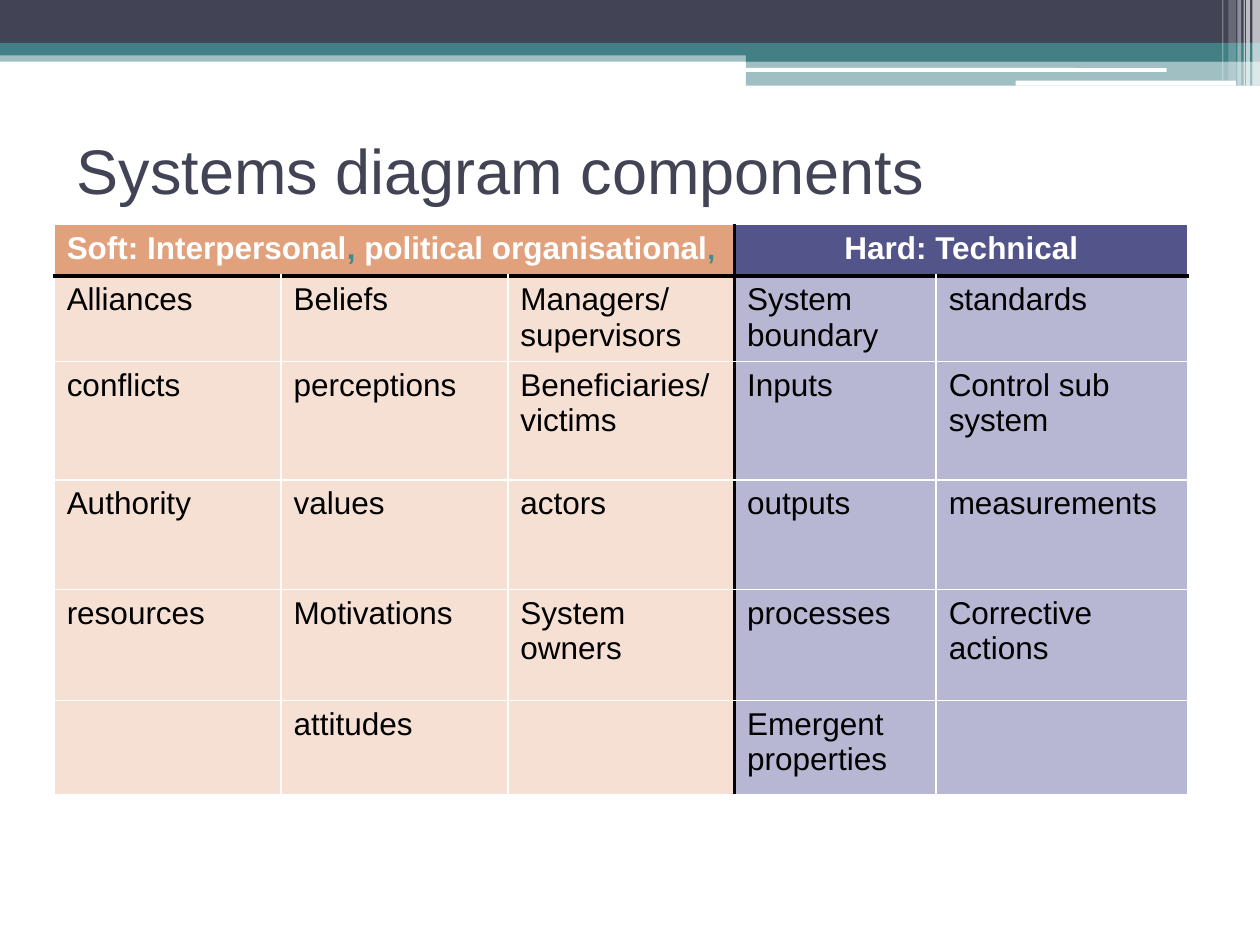
from lxml.etree import SubElement
from pptx import Presentation
from pptx.dml.color import RGBColor
from pptx.enum.shapes import MSO_SHAPE
from pptx.enum.text import MSO_ANCHOR, PP_ALIGN
from pptx.oxml import parse_xml
from pptx.oxml.ns import nsdecls, qn
from pptx.util import Inches, Pt

FONT = "Arial"
WHITE = RGBColor(0xFF, 0xFF, 0xFF)
BLACK = RGBColor(0, 0, 0)
SLATE = RGBColor(0x42, 0x44, 0x56)
TEAL = RGBColor(0x43, 0x80, 0x86)
COMMA_TEAL = RGBColor(0x3C, 0x8C, 0x93)
SOFT_HEAD = RGBColor(0xE1, 0xA1, 0x7C)
SOFT_BODY = RGBColor(0xF5, 0xE0, 0xD3)
HARD_HEAD = RGBColor(0x53, 0x54, 0x8A)
HARD_BODY = RGBColor(0xB7, 0xB7, 0xD4)

SOFT_COLS = 3
COL_WIDTHS = [1.8, 1.8, 1.8, 1.6, 2]
ROW_HEIGHTS = [0.41, 0.68, 0.94, 0.87, 0.88, 0.75]
SOFT_TITLE = [
    ("Soft: Interpersonal", WHITE, 18),
    (", ", COMMA_TEAL, 18),
    ("political organisational", WHITE, 18),
    (",", COMMA_TEAL, 16),
]
HARD_TITLE = [("Hard: Technical", WHITE, 18)]
COMPONENTS = [
    ["Alliances", "Beliefs", "Managers/supervisors", "System boundary", "standards"],
    ["conflicts", "perceptions", "Beneficiaries/victims", "Inputs", "Control sub system"],
    ["Authority", "values", "actors", "outputs", "measurements"],
    ["resources", "Motivations", "System owners", "processes", "Corrective actions"],
    ["", "attitudes", "", "Emergent properties", ""],
]

BANDS = [
    (0, 0.4, 10, 0.09, TEAL, 50),
    (0, 0, 10, 0.34, SLATE, 100),
    (0, 0.34, 10, 0.1, TEAL, 100),
    (5.92, 0.39, 4.08, 0.1, TEAL, 100),
    (5.92, 0.48, 4.08, 0.2, TEAL, 50),
]
ROUNDED_LINES = [(5.91, 0.54, 3.35, 0.03), (8.06, 0.64, 1.75, 0.04)]
STRIPES = [
    (9.94, 0.06, 0.68, 65),
    (9.89, 0.03, 0.68, 65),
    (9.87, 0.01, 0.68, 60),
    (9.82, 0.03, 0.68, 40),
    (9.75, 0.06, 0.64, 20),
    (9.7, 0.01, 0.64, 30),
]


def add_block(s, left, top, width, height, color, opacity=100, kind=MSO_SHAPE.RECTANGLE):
    """Add one flat block with the given opacity in percent."""
    sp = s.shapes.add_shape(kind, Inches(left), Inches(top), Inches(width), Inches(height))
    sp.shadow.inherit = False
    sp.line.fill.background()
    sp.fill.solid()
    sp.fill.fore_color.rgb = color
    if opacity < 100:
        clr = sp.fill._xPr.find(qn("a:solidFill"))[0]
        SubElement(clr, qn("a:alpha"), val=str(opacity * 1000))


def add_header(s, left, top):
    """Draw the layered header with its white lines and stripes."""
    for x, y, width, height, color, opacity in BANDS:
        add_block(s, left + x, top + y, width, height, color, opacity)
    for x, y, width, height in ROUNDED_LINES:
        add_block(s, left + x, top + y, width, height, WHITE, kind=MSO_SHAPE.ROUNDED_RECTANGLE)
    for x, width, height, opacity in STRIPES:
        add_block(s, left + x, top, width, height, WHITE, opacity)


def set_title(s, text, left, top, width, height):
    """Place and format the title placeholder."""
    sp = s.shapes.title
    sp.left, sp.top = Inches(left), Inches(top)
    sp.width, sp.height = Inches(width), Inches(height)
    tf = sp.text_frame
    tf.text = text
    tf.vertical_anchor = MSO_ANCHOR.MIDDLE
    p = tf.paragraphs[0]
    p.alignment = PP_ALIGN.LEFT
    p.font.name, p.font.size = FONT, Pt(36)
    p.font.color.rgb = SLATE


def set_borders(cell, row, col):
    """Rule the cell in white, with black between groups and under the head."""
    last_col = col + (cell.span_width if cell.is_merge_origin else 1) - 1
    heavy_sides = {
        "L": col == SOFT_COLS,
        "R": last_col == SOFT_COLS - 1,
        "T": row == 1,
        "B": row == 0,
    }
    tcPr = cell._tc.get_or_add_tcPr()
    for i, (side, heavy) in enumerate(heavy_sides.items()):
        color, width = (BLACK, Pt(2.25)) if heavy else (WHITE, Pt(1))
        tcPr.insert(i, parse_xml(
            f'<a:ln{side} {nsdecls("a")} w="{width}"><a:solidFill>'
            f'<a:srgbClr val="{color}"/></a:solidFill></a:ln{side}>'))


def fill_head(cell, runs, alignment):
    """Write a group heading from coloured runs."""
    p = cell.text_frame.paragraphs[0]
    p.alignment = alignment
    p.font.name, p.font.bold = FONT, True
    for text, color, size in runs:
        r = p.add_run()
        r.text = text
        r.font.size = Pt(size)
        r.font.color.rgb = color


def fill_body(cell, text):
    """Write one component name."""
    cell.text = text
    p = cell.text_frame.paragraphs[0]
    p.font.name, p.font.size, p.font.bold = FONT, Pt(18), False
    p.font.color.rgb = BLACK


def add_components_table(s, left, top):
    """Build the table of soft and hard system components."""
    table = s.shapes.add_table(
        len(ROW_HEIGHTS), len(COL_WIDTHS), Inches(left), Inches(top),
        Inches(sum(COL_WIDTHS)), Inches(sum(ROW_HEIGHTS))).table
    for column, width in zip(table.columns, COL_WIDTHS):
        column.width = Inches(width)
    for row, height in zip(table.rows, ROW_HEIGHTS):
        row.height = Inches(height)
    table.cell(0, 0).merge(table.cell(0, SOFT_COLS - 1))
    table.cell(0, SOFT_COLS).merge(table.cell(0, len(COL_WIDTHS) - 1))
    fill_head(table.cell(0, 0), SOFT_TITLE, PP_ALIGN.LEFT)
    fill_head(table.cell(0, SOFT_COLS), HARD_TITLE, PP_ALIGN.CENTER)
    for row in range(len(ROW_HEIGHTS)):
        for col in range(len(COL_WIDTHS)):
            cell = table.cell(row, col)
            head, body = (SOFT_HEAD, SOFT_BODY) if col < SOFT_COLS else (HARD_HEAD, HARD_BODY)
            cell.fill.solid()
            cell.fill.fore_color.rgb = body if row else head
            set_borders(cell, row, col)
            if row:
                fill_body(cell, COMPONENTS[row - 1][col])


def main():
    """Build and save the slide."""
    prs = Presentation()
    prs.slide_width, prs.slide_height = Inches(10), Inches(7.5)
    s = prs.slides.add_slide(prs.slide_layouts[5])
    add_header(s, 0, 0)
    set_title(s, "Systems diagram components", 0.51, 0.76, 9, 1.17)
    add_components_table(s, 0.43, 1.78)
    prs.save("out.pptx")


if __name__ == "__main__":
    main()
